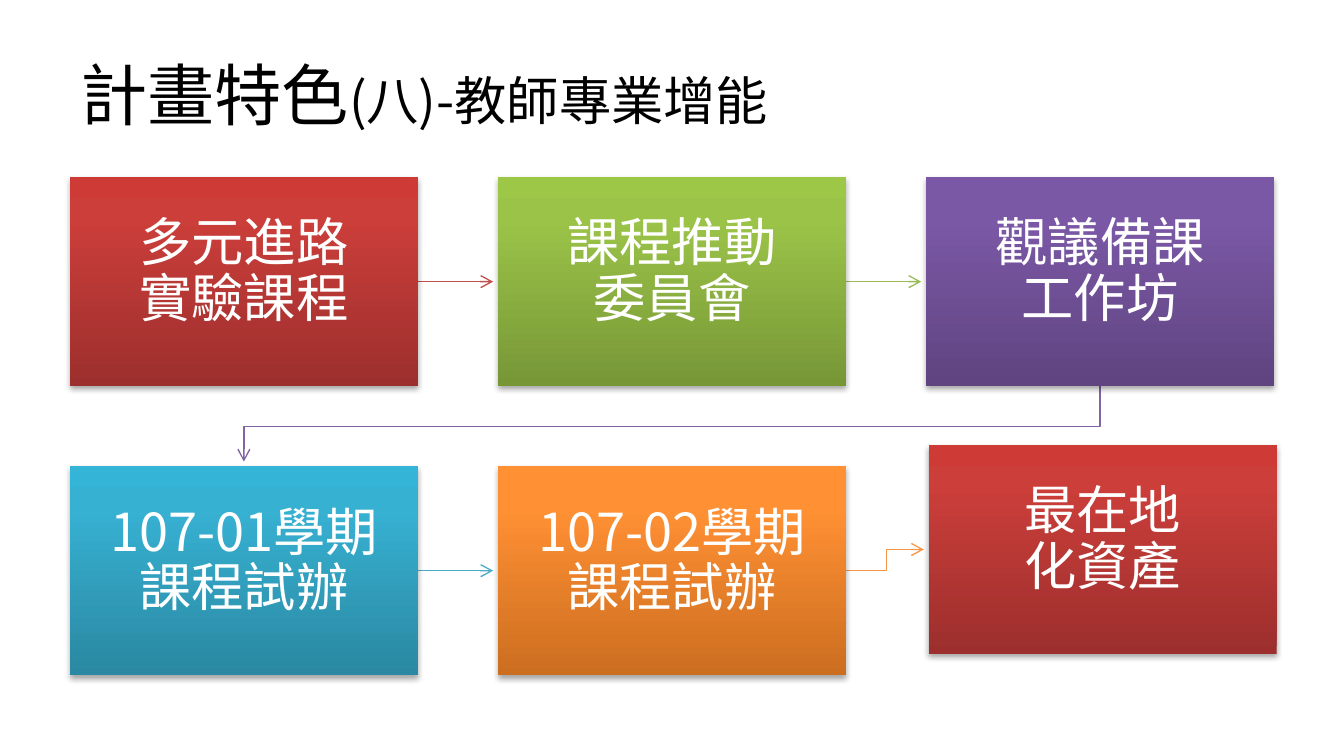
import copy

import pptx
import pptx.dml.color
import pptx.enum.shapes
import pptx.enum.text
import pptx.oxml
import pptx.oxml.ns
import pptx.util

Cm, Pt = pptx.util.Cm, pptx.util.Pt
RGB = pptx.dml.color.RGBColor.from_string
qn = pptx.oxml.ns.qn
ALIGN = pptx.enum.text.PP_ALIGN
MIDDLE = pptx.enum.text.MSO_ANCHOR.MIDDLE

TITLE = [("計畫特色", "title"), ("(八)-教師專業增能", "body")]
# Text lines and colour of each step, in reading order
STEPS = [
    (["多元進路", "實驗課程"], "red"),
    (["課程推動", "委員會"], "green"),
    (["觀議備課", "工作坊"], "purple"),
    (["107-01學期", "課程試辦"], "cyan"),
    (["107-02學期", "課程試辦"], "orange"),
    (["最在地", "化資產"], "red"),
]

THEME = {
    "font": "Noto Sans CJK SC",
    "sizes": {"title": 36, "body": 28},
    "title": "000000",
    "box_text": "FFFFFF",
    "stops": (0, 0.8, 1),
    # Gradient from bottom to top
    "fills": {
        "red": ("9C2F2D", "CB3E3A", "CE3B37"),
        "green": ("779737", "9BC348", "9DC746"),
        "purple": ("5F4480", "7B58A6", "7C57A8"),
        "cyan": ("2A88A2", "37B1D2", "34B4D6"),
        "orange": ("CC6E20", "FF9034", "FF9136"),
    },
    "lines": {"red": "C0504D", "green": "9BBB59", "purple": "8064A2",
              "cyan": "4BACC6", "orange": "F79646"},
}

# All lengths in centimetres
COLUMNS = 3
LEFT, TOP = 1.32, 3.35
BOX_W, BOX_H = 6.58, 3.94
PITCH_X, PITCH_Y = 8.09, 5.46
LAST_SHIFT = (0.05, -0.4)
INSET = 0.56
TIP_GAP = 0.09
BEND = 0.77

SHADOW = (
    '<a:outerShdw xmlns:a="http://schemas.openxmlformats.org/drawingml/2006/main"'
    ' blurRad="39370" dist="22860" dir="5400000" rotWithShape="0">'
    '<a:srgbClr val="000000"><a:alpha val="35000"/></a:srgbClr></a:outerShdw>'
)


def box_position(i):
    row, col = divmod(i, COLUMNS)
    x, y = LEFT + col * PITCH_X, TOP + row * PITCH_Y
    if i == len(STEPS) - 1:
        x, y = x + LAST_SHIFT[0], y + LAST_SHIFT[1]
    return x, y


def format_run(r, size, color):
    r.font.name = THEME["font"]
    r.font.size = Pt(THEME["sizes"][size])
    r.font.color.rgb = RGB(color)
    ea = pptx.oxml.parse_xml(
        '<a:ea xmlns:a="http://schemas.openxmlformats.org/drawingml/2006/main"/>')
    ea.set("typeface", THEME["font"])
    r.font._element.find(qn("a:latin")).addnext(ea)


def add_title(s):
    tf = s.shapes.add_textbox(Cm(1.27), Cm(0.58), Cm(22.86), Cm(2.39)).text_frame
    tf.word_wrap = True
    tf.vertical_anchor = MIDDLE
    for text, size in TITLE:
        r = tf.paragraphs[0].add_run()
        r.text = text
        format_run(r, size, THEME["title"])


def fill_gradient(sp, colors):
    sp.fill.gradient()
    sp.fill.gradient_angle = 90
    stop_list = next(sp._element.iter(qn("a:gsLst")))
    stop_list.append(copy.deepcopy(stop_list[0]))
    for stop, position, color in zip(sp.fill.gradient_stops, THEME["stops"], colors):
        stop.position = position
        stop.color.rgb = RGB(color)


def add_box(s, i):
    lines, color = STEPS[i]
    x, y = box_position(i)
    sp = s.shapes.add_shape(pptx.enum.shapes.MSO_SHAPE.RECTANGLE,
                            Cm(x), Cm(y), Cm(BOX_W), Cm(BOX_H))
    fill_gradient(sp, THEME["fills"][color])
    sp.line.fill.background()
    sp.shadow.inherit = False
    effects = next(sp._element.iter(qn("a:effectLst")))
    effects.append(pptx.oxml.parse_xml(SHADOW))

    tf = sp.text_frame
    tf.word_wrap = True
    tf.vertical_anchor = MIDDLE
    tf.margin_left = tf.margin_right = tf.margin_top = tf.margin_bottom = Cm(INSET)
    tf.text = "\n".join(lines)
    for p in tf.paragraphs:
        p.alignment = ALIGN.CENTER
        p.line_spacing = Pt(20)
        p.space_after = Pt(9.8)
        format_run(p.runs[0], "body", THEME["box_text"])


def arrow_route(i):
    """Return the points from step i to the next step, with bends if needed."""
    (x1, y1), (x2, y2) = box_position(i), box_position(i + 1)
    if (i + 1) % COLUMNS == 0:
        x1, x2 = x1 + BOX_W / 2, x2 + BOX_W / 2
        y1 += BOX_H
        return [(x1, y1), (x1, y1 + BEND), (x2, y1 + BEND), (x2, y2 - TIP_GAP)]
    x1 += BOX_W
    y1, y2 = y1 + BOX_H / 2, y2 + BOX_H / 2
    end = (x2 - TIP_GAP, y2)
    if y1 == y2:
        return [(x1, y1), end]
    return [(x1, y1), (x1 + BEND, y1), (x1 + BEND, y2), end]


def add_arrow(s, i):
    points = [(Cm(x), Cm(y)) for x, y in arrow_route(i)]
    if len(points) == 2:
        sp = s.shapes.add_connector(pptx.enum.shapes.MSO_CONNECTOR.STRAIGHT,
                                    *points[0], *points[1])
    else:
        builder = s.shapes.build_freeform(*points[0])
        builder.add_line_segments(points[1:], close=False)
        sp = builder.convert_to_shape()
        sp.fill.background()
    sp.line.color.rgb = RGB(THEME["lines"][STEPS[i][1]])
    sp.line.width = Pt(0.75)
    ln = next(sp._element.iter(qn("a:ln")))
    ln.append(ln.makeelement(qn("a:tailEnd"), {"type": "arrow"}))
    ln.addnext(ln.makeelement(qn("a:effectLst"), {}))


def main():
    prs = pptx.Presentation()
    prs.slide_width, prs.slide_height = Cm(25.4), Cm(14.28)
    s = prs.slides.add_slide(prs.slide_layouts[6])
    add_title(s)
    for i in range(len(STEPS)):
        if i < len(STEPS) - 1:
            add_arrow(s, i)
        add_box(s, i)
    prs.save("out.pptx")


if __name__ == "__main__":
    main()
